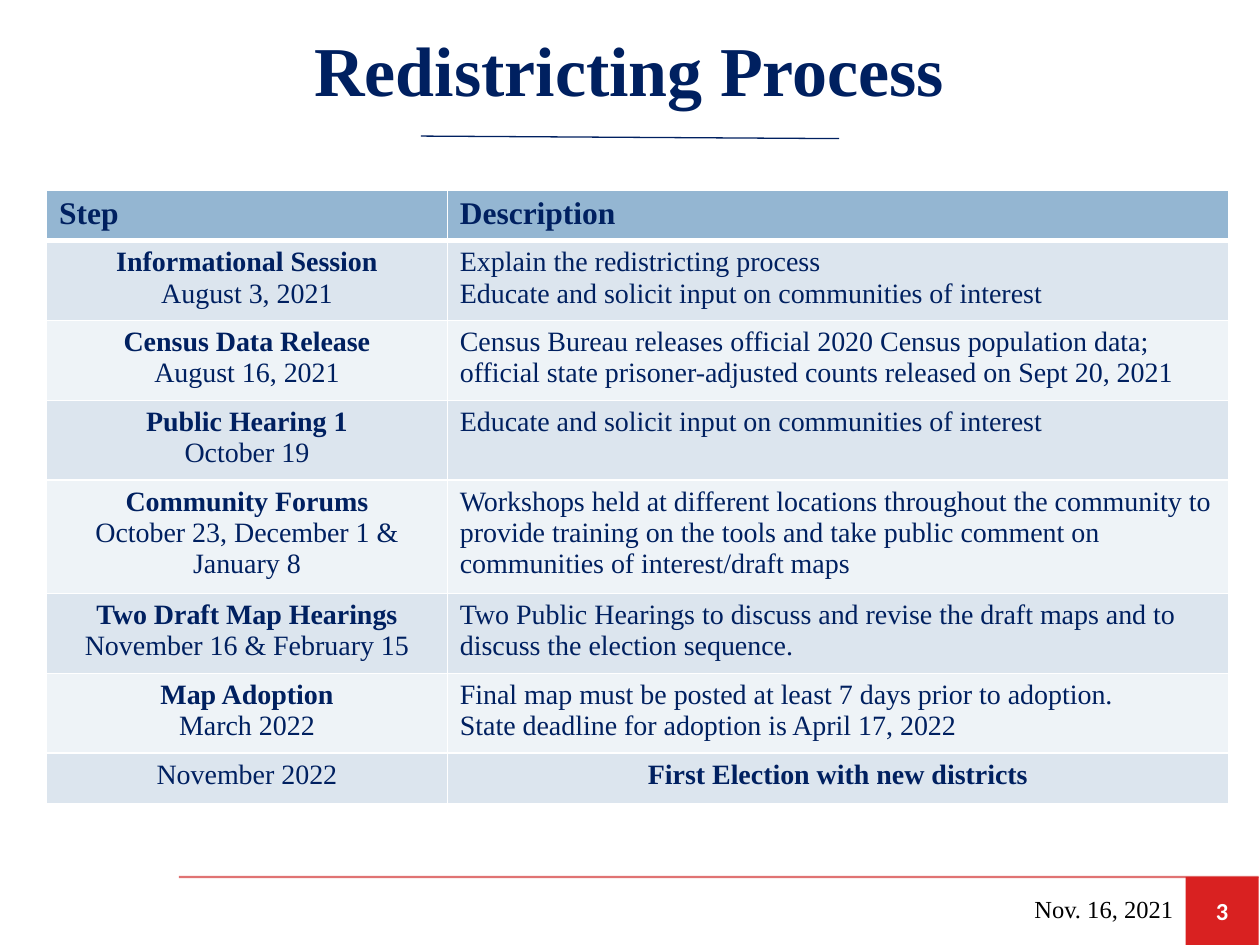
"""Build the Redistricting Process slide with its table of steps."""
from lxml.etree import SubElement
from pptx import Presentation
from pptx.dml.color import RGBColor
from pptx.enum.shapes import MSO_CONNECTOR, MSO_SHAPE
from pptx.enum.text import MSO_ANCHOR, PP_ALIGN
from pptx.oxml.ns import qn
from pptx.util import Inches, Pt

NAVY = "002060"
SERIF = "Times New Roman"


def rgb(value):
    return RGBColor.from_string(value)


def format_paragraph(paragraph, size, color, bold=False, align=PP_ALIGN.LEFT, font=SERIF):
    paragraph.alignment = align
    for run in paragraph.runs:
        run.font.name = font
        run.font.size = Pt(size)
        run.font.bold = bold
        run.font.color.rgb = rgb(color)


prs = Presentation()
prs.slide_width, prs.slide_height = Inches(10), Inches(7.5)
slide = prs.slides.add_slide(prs.slide_layouts[6])
shapes = slide.shapes

rules = [
    (1.42, 6.96, 9.99, 6.96, "C80000", 1.25, 55),
    (3.34, 1.08, 6.66, 1.1, NAVY, 0.75, 100),
]
for x1, y1, x2, y2, color, width, opacity in rules:
    rule = shapes.add_connector(
        MSO_CONNECTOR.STRAIGHT, Inches(x1), Inches(y1), Inches(x2), Inches(y2))
    rule.line.color.rgb = rgb(color)
    rule.line.width = Pt(width)
    properties = rule._element.spPr
    if opacity < 100:
        tint = properties.find(".//" + qn("a:srgbClr"))
        SubElement(tint, qn("a:alpha"), val=str(opacity * 1000))
    SubElement(properties, qn("a:effectLst"))

page_number = shapes.add_shape(
    MSO_SHAPE.RECTANGLE, Inches(9.41), Inches(6.96), Inches(0.58), Inches(0.54))
page_number.shadow.inherit = False
page_number.fill.solid()
page_number.fill.fore_color.rgb = rgb("D92121")
page_number.line.fill.background()
page_number.text_frame.text = "3"
page_number.text_frame.vertical_anchor = MSO_ANCHOR.MIDDLE
format_paragraph(page_number.text_frame.paragraphs[0], 14, "FFFFFF", True,
                 PP_ALIGN.CENTER, "Calibri")

labels = [
    ("Redistricting Process", 0.37, 0, 9.25, 1.08, 40, NAVY, True, PP_ALIGN.CENTER),
    ("Nov. 16, 2021", 6.49, 7.01, 2.92, 0.4, 14, "000000", False, PP_ALIGN.RIGHT),
]
for text, left, top, width, height, size, color, bold, align in labels:
    label = shapes.add_textbox(Inches(left), Inches(top), Inches(width), Inches(height))
    label.text_frame.word_wrap = True
    label.text_frame.vertical_anchor = MSO_ANCHOR.MIDDLE
    label.text_frame.text = text
    format_paragraph(label.text_frame.paragraphs[0], size, color, bold, align)

steps = [
    ("Step", "Description"),
    ("Informational Session\nAugust 3, 2021",
     "Explain the redistricting process\n"
     "Educate and solicit input on communities of interest"),
    ("Census Data Release\nAugust 16, 2021",
     "Census Bureau releases official 2020 Census population data; "
     "official state prisoner-adjusted counts released on Sept 20, 2021"),
    ("Public Hearing 1\nOctober 19",
     "Educate and solicit input on communities of interest"),
    ("Community Forums\nOctober 23, December 1 & January 8",
     "Workshops held at different locations throughout the community to provide "
     "training on the tools and take public comment on communities of interest/draft maps"),
    ("Two Draft Map Hearings\nNovember 16 & February 15",
     "Two Public Hearings to discuss and revise the draft maps and to "
     "discuss the election sequence."),
    ("Map Adoption\nMarch 2022",
     "Final map must be posted at least 7 days prior to adoption.\n"
     "State deadline for adoption is April 17, 2022"),
    ("November 2022", "First Election with new districts"),
]
row_heights = [0.4, 0.59, 0.59, 0.59, 0.84, 0.59, 0.59, 0.4]
last = len(steps) - 1
schedule = shapes.add_table(len(steps), 2, Inches(0.37), Inches(1.51),
                            Inches(9.38), Inches(sum(row_heights))).table
schedule.columns[0].width = Inches(3.18)
schedule.columns[1].width = Inches(6.2)

for row, (step, height) in enumerate(zip(steps, row_heights)):
    schedule.rows[row].height = Inches(height)
    fill = "94B6D2" if row == 0 else "DCE5EE" if row % 2 else "EEF3F7"
    for column, text in enumerate(step):
        cell = schedule.cell(row, column)
        cell.text_frame.text = text
        centred = row > 0 and (column == 0 or row == last)
        for index, paragraph in enumerate(cell.text_frame.paragraphs):
            step_name = column == 0 and index == 0 and row < last
            bold = row == 0 or step_name or (row == last and column == 1)
            format_paragraph(paragraph, 18 if row == 0 else 16, NAVY, bold,
                             PP_ALIGN.CENTER if centred else PP_ALIGN.LEFT)
        cell_properties = cell._tc.get_or_add_tcPr()
        for side in "LRTB":
            thick = (row == 0 and side == "B") or (row == 1 and side == "T")
            border = SubElement(cell_properties, qn(f"a:ln{side}"), w=str(Pt(3 if thick else 1)))
            SubElement(SubElement(border, qn("a:solidFill")), qn("a:srgbClr"), val="FFFFFF")
        cell.fill.solid()
        cell.fill.fore_color.rgb = rgb(fill)

prs.save("out.pptx")
